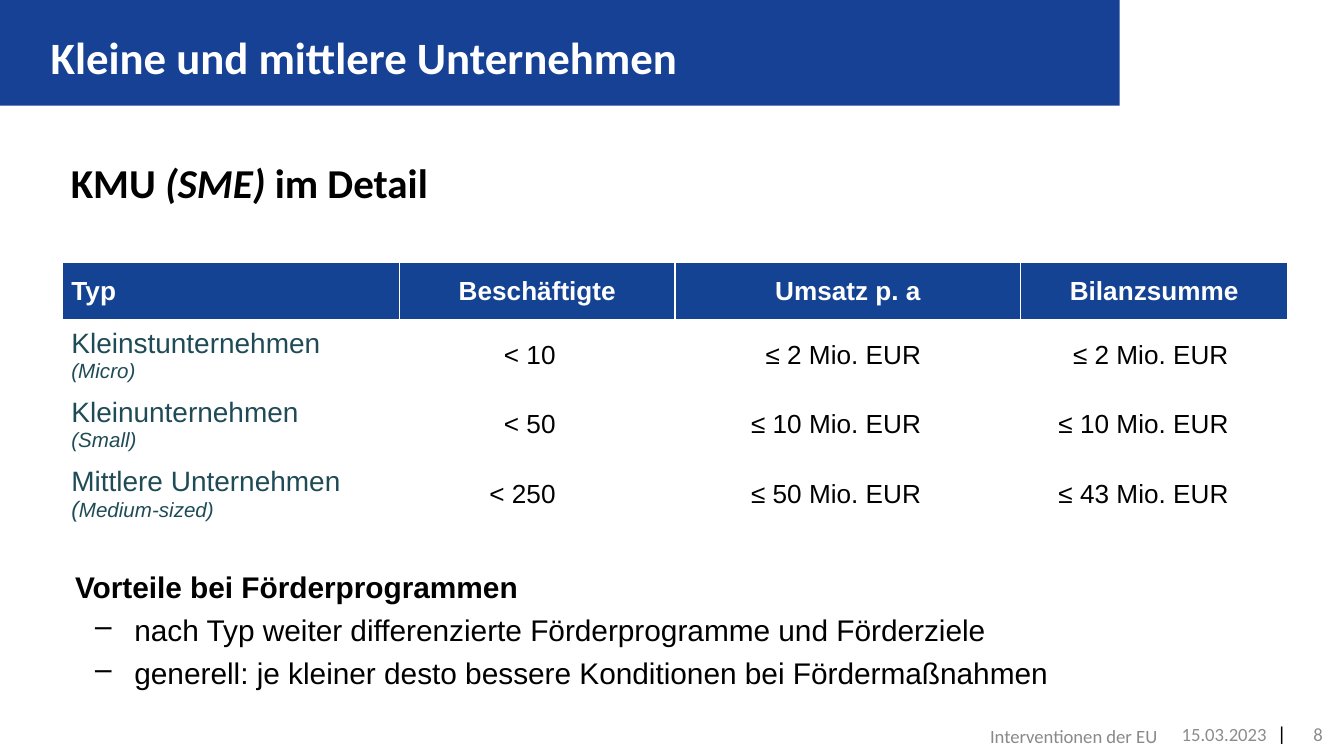
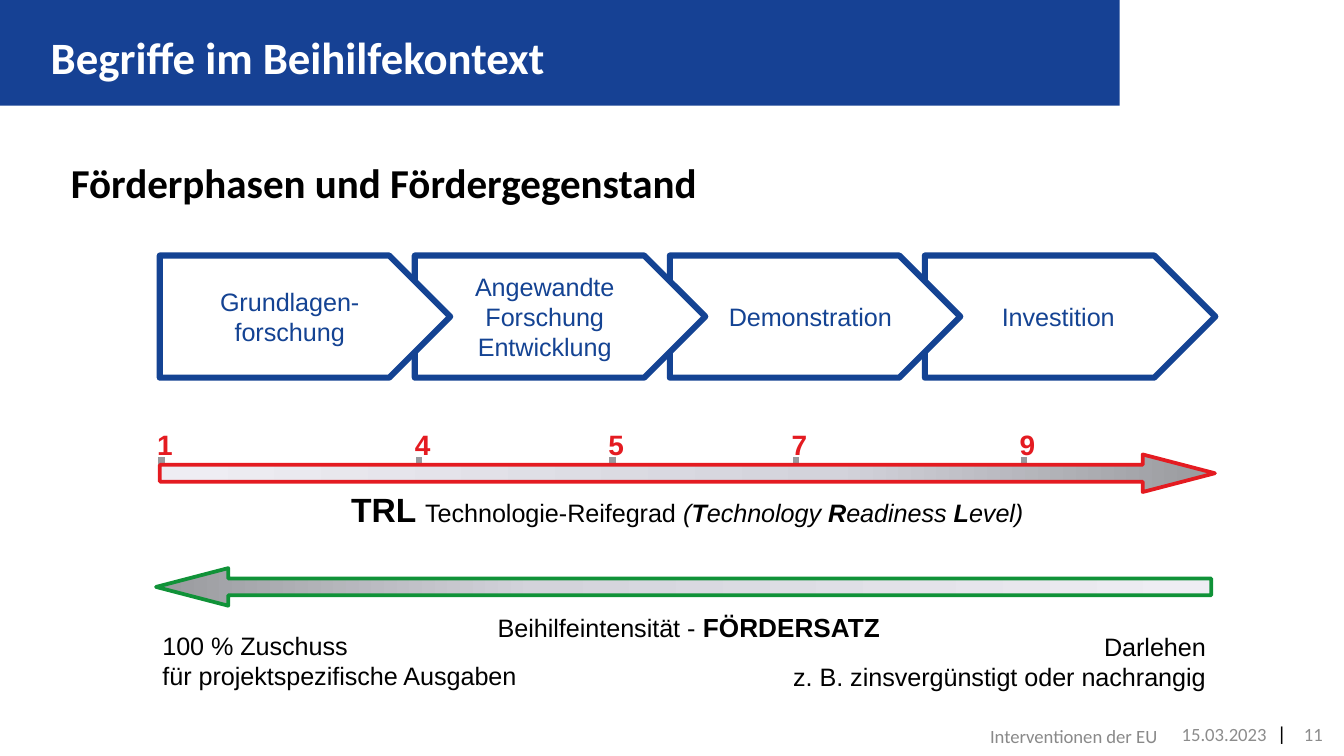
from dataclasses import dataclass

from lxml.etree import SubElement
from pptx import Presentation
from pptx.dml.color import RGBColor
from pptx.enum.shapes import MSO_CONNECTOR as CONN, MSO_SHAPE as SHAPE
from pptx.enum.text import MSO_ANCHOR as ANCHOR, MSO_AUTO_SIZE as AUTO, PP_ALIGN as ALIGN
from pptx.oxml.ns import qn
from pptx.util import Cm, Pt


@dataclass(frozen=True)
class Theme:
    heading: str = "Calibri"
    body: str = "Arial"
    band: str = "164194"
    blue: str = "144393"
    teal: str = "1F4B56"
    red: str = "E41B21"
    green: str = "109238"
    tick: str = "98999D"
    date: str = "8C8C8C"
    footer: str = "898989"
    white: str = "FFFFFF"
    black: str = "000000"
    fade: tuple = ((0, "999A9E"), (36, "D3D3DB"), (98, "EEEDF3"))
    title_size: float = 24
    subtitle_size: float = 22
    trl_size: float = 18
    list_size: float = 16
    large_size: float = 15
    table_size: float = 14
    label_size: float = 13.5
    paren_size: float = 12
    note_size: float = 11
    footer_size: float = 10


T = Theme()
MIDDLE = {"vertical_anchor": ANCHOR.MIDDLE}
GROW = {"auto_size": AUTO.SHAPE_TO_FIT_TEXT}
NO_WRAP = {"word_wrap": False, **GROW}
LABEL = {"size": T.label_size}
BOLD, PLAIN = {"bold": True}, {"bold": False}


def rgb(value):
    return RGBColor.from_string(value)


def margins(left, top, right, bottom):
    sides = ("left", "top", "right", "bottom")
    return {f"margin_{s}": Cm(v) for s, v in zip(sides, (left, top, right, bottom))}


class Deck:
    """Builds slides that share one theme, title band and footer."""

    def __init__(self, theme):
        self.theme = theme
        self.prs = Presentation()
        self.prs.slide_width, self.prs.slide_height = Cm(25.4), Cm(14.29)
        self.slide = None

    def add_slide(self, title, subtitle, number):
        t = self.theme
        self.slide = self.prs.slides.add_slide(self.prs.slide_layouts[6])
        self.shape(SHAPE.RECTANGLE, (0, 0, 21.16, 2), fill=t.band)
        foot = {"size": t.footer_size, "name": t.heading}
        inset = margins(0.1, 0.1, 0.1, 0.2)
        self.text((24.08, 13.54, 0.3, 0.74), ["|"], {**NO_WRAP, **inset}, size=t.footer_size)
        self.text((0.71, 0.36, 19, 1.42), [title], MIDDLE,
                  size=t.title_size, name=t.heading, color=t.white, bold=True)
        self.text((1.09, 2.34, 23.19, 2.21), [subtitle], MIDDLE,
                  size=t.subtitle_size, name=t.heading, bold=True)
        self.text((22.17, 13.54, 1.93, 0.76), ["15.03.2023"], {**MIDDLE, **inset},
                  ALIGN.CENTER, color=t.date, **foot)
        self.text((10.31, 13.54, 11.81, 0.76), ["Interventionen der EU"], MIDDLE,
                  ALIGN.RIGHT, color=t.footer, **foot)
        self.text((24.31, 13.54, 0.99, 0.76), [number], {**MIDDLE, **margins(0, 0.1, 0.3, 0.2)},
                  ALIGN.RIGHT, color=t.date, **foot)

    def style(self, font, **fmt):
        fmt = {"name": self.theme.body, "color": self.theme.black, **fmt}
        font.color.rgb = rgb(fmt.pop("color"))
        fmt["size"] = Pt(fmt["size"])
        for key, value in fmt.items():
            setattr(font, key, value)

    def paragraphs(self, tf, paragraphs, align=ALIGN.LEFT, bullets=False, **fmt):
        for i, runs in enumerate(paragraphs):
            p = tf.add_paragraph() if i else tf.paragraphs[0]
            p.alignment = align
            if bullets and i:
                self.bullet(p)
            for run in [runs] if isinstance(runs, str) else runs:
                words, extra = (run, {}) if isinstance(run, str) else run
                r = p.add_run()
                r.text = words
                self.style(r.font, **{**fmt, **extra})

    def bullet(self, p):
        p.level = 1
        p.space_before = Pt(4)
        pPr = p._p.get_or_add_pPr()
        pPr.set("marL", str(Cm(1.12)))
        pPr.set("indent", str(Cm(-0.74)))
        SubElement(pPr, qn("a:buChar"), char="–")

    def text(self, box, paragraphs, frame=None, align=ALIGN.LEFT, **fmt):
        tf = self.slide.shapes.add_textbox(*map(Cm, box)).text_frame
        for key, value in {"word_wrap": True, **(frame or {})}.items():
            setattr(tf, key, value)
        self.paragraphs(tf, paragraphs, align, **fmt)

    def shape(self, kind, box, fill=None, line=None, width=1):
        sp = self.slide.shapes.add_shape(kind, *map(Cm, box))
        sp.shadow.inherit = False
        if fill:
            sp.fill.solid()
            sp.fill.fore_color.rgb = rgb(fill)
        if line:
            sp.line.color.rgb = rgb(line)
            sp.line.width = Pt(width)
        else:
            sp.line.fill.background()
        return sp

    def plate(self, box, paragraphs, nudge):
        sp = self.shape(SHAPE.PENTAGON, box, self.theme.white, self.theme.blue, 3.25)
        sp.text_frame.word_wrap = True
        sp.text_frame.margin_left = Cm(0.25 + nudge)
        self.paragraphs(sp.text_frame, paragraphs, ALIGN.CENTER, color=self.theme.blue, **LABEL)

    def fade_arrow(self, box, line, rotation=0):
        sp = self.shape(SHAPE.LEFT_ARROW, box, line=line, width=2)
        sp.rotation = rotation
        sp.adjustments[0], sp.adjustments[1] = 0.446, 1.922
        sp.fill.gradient()
        sp.fill.gradient_angle = 0
        stops = sp._element.spPr.find(".//" + qn("a:gsLst"))
        for stop in list(stops):
            stops.remove(stop)
        for percent, color in self.theme.fade:
            gs = SubElement(stops, qn("a:gs"), pos=str(percent * 1000))
            SubElement(gs, qn("a:srgbClr"), val=color)

    def line(self, x1, y1, x2, y2, color, width):
        ln = self.slide.shapes.add_connector(CONN.STRAIGHT, *map(Cm, (x1, y1, x2, y2)))
        ln.line.color.rgb = rgb(color)
        ln.line.width = Pt(width)
        SubElement(ln._element.spPr, qn("a:effectLst"))

    def borders(self, cell, bottom):
        tcPr = cell._tc.get_or_add_tcPr()
        for side, width in (("L", 1), ("R", 1), ("T", 1), ("B", bottom)):
            ln = SubElement(tcPr, qn(f"a:ln{side}"), w=str(Pt(width)))
            SubElement(SubElement(ln, qn("a:solidFill")), qn("a:srgbClr"), val=self.theme.white)

    def cell(self, cell, paragraphs, align, right=0.18, fill=None, **fmt):
        self.borders(cell, 3 if fill else 1)
        if fill:
            cell.fill.solid()
            cell.fill.fore_color.rgb = rgb(fill)
        else:
            cell.fill.background()
        for key, value in {**MIDDLE, **margins(0.18, 0.1, right, 0.1)}.items():
            setattr(cell, key, value)
        self.paragraphs(cell.text_frame, paragraphs, align, **fmt)

    def table(self, left, top, widths, heights, header, rows, rights):
        t = self.theme
        box = map(Cm, (left, top, sum(widths), sum(heights)))
        table = self.slide.shapes.add_table(len(heights), len(widths), *box).table
        table.horz_banding = False
        for column, width in zip(table.columns, widths):
            column.width = Cm(width)
        for row, height in zip(table.rows, heights):
            row.height = Cm(height)
        for c, words in enumerate(header):
            self.cell(table.cell(0, c), [words], ALIGN.CENTER if c else ALIGN.LEFT,
                      fill=t.blue, size=t.table_size, color=t.white, bold=True)
        for i, (kind, *values) in enumerate(rows, 1):
            self.cell(table.cell(i, 0), kind, ALIGN.LEFT,
                      size=t.large_size, color=t.teal, bold=False)
            for c, (value, right) in enumerate(zip(values, rights), 1):
                self.cell(table.cell(i, c), [value], ALIGN.RIGHT, right,
                          size=t.table_size, bold=False)


def company_slide(deck):
    deck.add_slide("Kleine und mittlere Unternehmen",
                   ["KMU ", ("(SME) ", {"italic": True}), "im Detail"], "8")
    note = {"size": T.note_size, "italic": True}
    rows = [
        (["Kleinstunternehmen", [("(Micro)", note)]], "< 10", "≤ 2 Mio. EUR", "≤ 2 Mio. EUR"),
        (["Kleinunternehmen", [("(Small)", note)]], "< 50", "≤ 10 Mio. EUR", "≤ 10 Mio. EUR"),
        (["Mittlere Unternehmen", [("(", {**note, "size": T.paren_size}), ("Medium-sized)", note)]],
         "< 250", "≤ 50 Mio. EUR", "≤ 43 Mio. EUR"),
    ]
    deck.table(1.17, 4.95, (6.38, 5.21, 6.53, 5.05), (1.12, 1.27, 1.27, 1.35),
               ("Typ", "Beschäftigte", "Umsatz p. a", "Bilanzsumme"), rows, (2.26, 1.88, 1.12))
    deck.text((1.17, 10.62, 23.16, 2.72), [
        [("Vorteile bei Förderprogrammen", BOLD)],
        "nach Typ weiter differenzierte Förderprogramme und Förderziele",
        "generell: je kleiner desto bessere Konditionen bei Fördermaßnahmen",
    ], bullets=True, size=T.list_size)


def phase_slide(deck):
    deck.add_slide("Begriffe im Beihilfekontext", "Förderphasen und Fördergegenstand", "11")
    phases = [
        (["Grundlagen-forschung"], 0),
        (["Angewandte", "Forschung", "Entwicklung"], 0),
        (["Demonstration"], 0.4),
        (["Investition"], 0.13),
    ]
    for i, (words, nudge) in reversed(list(enumerate(phases))):
        deck.plate((3.02 + 4.82 * i, 4.83, 5.49, 2.31), words, nudge)

    levels = {"1": 3.05, "4": 7.92, "5": 11.58, "7": 15.04, "9": 19.35}
    for level, x in levels.items():
        deck.line(x, 8.64, x, 8.79, T.tick, 3.5)
        deck.text((x - 0.33, 7.95, 0.81, 0.89), [level], NO_WRAP,
                  size=T.large_size, color=T.red, bold=True)
    deck.fade_arrow((3.02, 8.59, 19.94, 0.71), T.red, 180)
    english = [("(", PLAIN), ("T", BOLD), ("echnology ", PLAIN), ("R", BOLD),
               ("eadiness ", PLAIN), ("L", BOLD), ("evel)", PLAIN)]
    deck.text((3.02, 9.12, 19.94, 1.02), [
        [("TRL ", {"size": T.trl_size, **BOLD}), "Technologie-Reifegrad "]
        + [(words, {"italic": True, **weight}) for words, weight in english],
    ], GROW, ALIGN.CENTER, **LABEL)

    deck.fade_arrow((2.95, 10.74, 19.94, 0.71), T.green)
    deck.text((3.05, 11.43, 19.94, 0.86), [
        ["Beihilfeintensität -", (" FÖRDERSATZ", {"size": T.table_size, **BOLD})],
    ], GROW, ALIGN.CENTER, **LABEL)
    deck.text((2.82, 11.79, 7.29, 1.42),
              ["100 % Zuschuss", "für projektspezifische Ausgaben"], NO_WRAP, **LABEL)
    deck.text((13.79, 11.81, 9.25, 1.42),
              ["Darlehen", "z. B. zinsvergünstigt oder nachrangig"], GROW, ALIGN.RIGHT, **LABEL)


def main():
    deck = Deck(T)
    company_slide(deck)
    phase_slide(deck)
    deck.prs.save("out.pptx")


if __name__ == "__main__":
    main()
